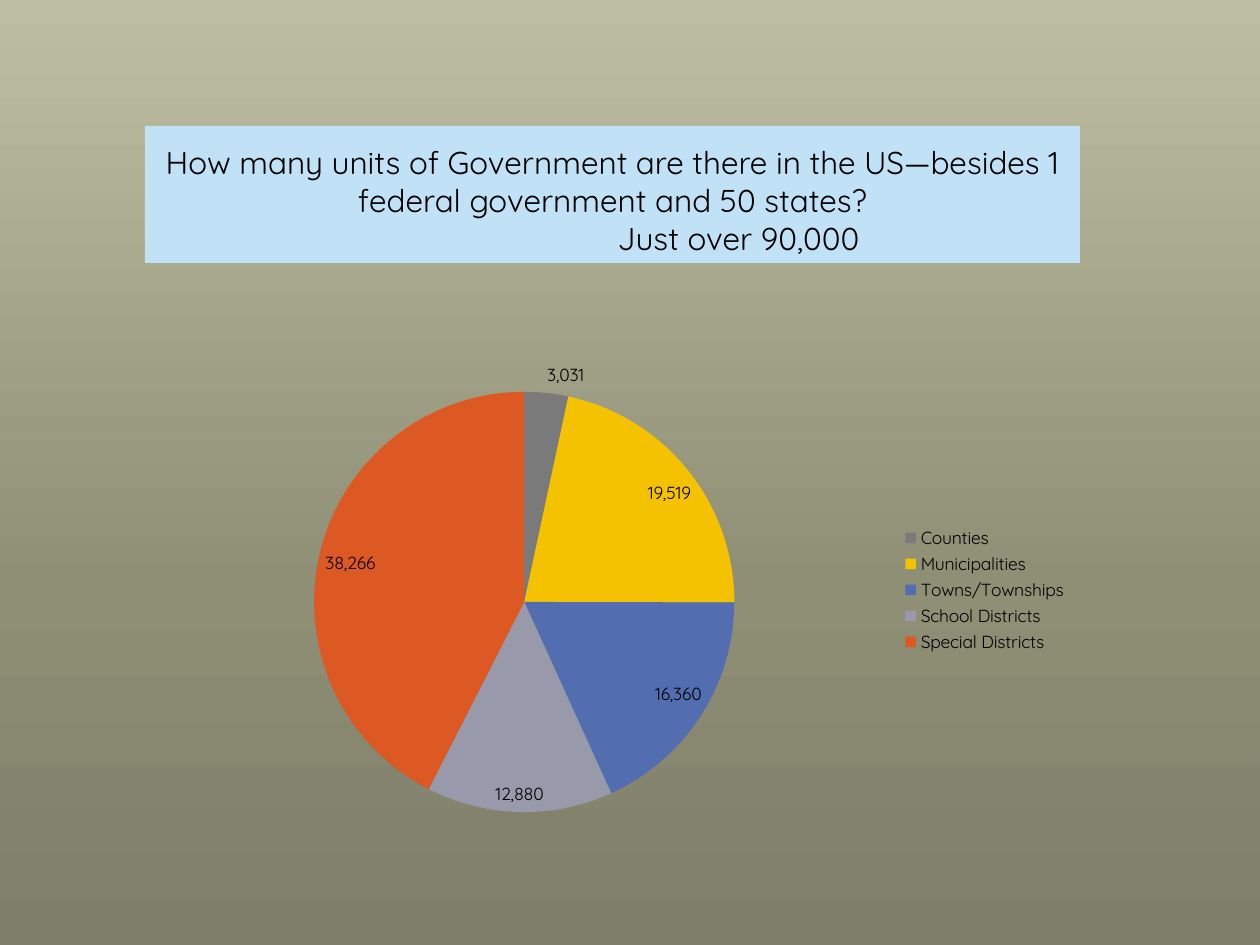
from copy import deepcopy

from lxml.etree import SubElement
from pptx import Presentation
from pptx.chart.data import CategoryChartData
from pptx.dml.color import RGBColor
from pptx.enum.chart import XL_CHART_TYPE, XL_LABEL_POSITION, XL_LEGEND_POSITION
from pptx.enum.shapes import MSO_SHAPE
from pptx.enum.text import MSO_ANCHOR, PP_ALIGN
from pptx.oxml.ns import qn
from pptx.util import Pt

PX = 914400 // 126  # one pixel in EMU
FONT = "Quicksand"
COLORS = {
    "text": "000000",
    "banner": "C1E1F6",
    "Counties": "7A7A7A",
    "Municipalities": "F5C201",
    "Towns/Townships": "526DB0",
    "School Districts": "989AAC",
    "Special Districts": "DC5924",
}
BACKGROUND = [(0, "BEBEA2"), (0.62, "8F8F76"), (1, "7E7E69")]
UNITS = {
    "Counties": 3031,
    "Municipalities": 19519,
    "Towns/Townships": 16360,
    "School Districts": 12880,
    "Special Districts": 38266,
}


def px(*lengths):
    return [length * PX for length in lengths]


def color(name):
    return RGBColor.from_string(COLORS[name])


def style_font(font, size):
    font.name = FONT
    font.size = Pt(size)
    font.color.rgb = color("text")


def paint_background(page):
    fill = page.background.fill
    fill.gradient()
    fill.gradient_angle = 270  # top to bottom
    # A new gradient has two stops; add the third
    stop_list = next(page.background._cSld.iter(qn("a:gsLst")))
    stop_list.append(deepcopy(stop_list[-1]))
    for stop, (position, value) in zip(fill.gradient_stops, BACKGROUND):
        stop.position = position
        stop.color.rgb = RGBColor.from_string(value)


def add_banner(page, left, top, width, height):
    box = page.shapes.add_shape(MSO_SHAPE.RECTANGLE, *px(left, top, width, height))
    box.shadow.inherit = False
    box.fill.solid()
    box.fill.fore_color.rgb = color("banner")
    box.line.fill.background()

    frame = box.text_frame
    frame.word_wrap = True
    frame.vertical_anchor = MSO_ANCHOR.BOTTOM
    question = frame.paragraphs[0]
    question.text = (
        "How many units of Government are there in the US—besides 1 "
        "federal government and 50 states?"
    )
    answer = frame.add_paragraph()
    answer.text = "Just over 90,000"
    # The indent moves the centred answer to the right
    answer._p.get_or_add_pPr().set("marL", str(252 * PX))
    for para in frame.paragraphs:
        para.alignment = PP_ALIGN.CENTER
        style_font(para.font, 18)


def set_plot_area(chart, **fractions):
    """Place the pie within the chart, as fractions of the chart's size."""
    plot_area = chart._chartSpace.chart.plotArea
    layout = plot_area.find(qn("c:layout"))
    if layout is None:
        layout = SubElement(plot_area, qn("c:layout"))
        plot_area.insert(0, layout)
    manual = SubElement(layout, qn("c:manualLayout"))
    settings = {"layoutTarget": "inner", "xMode": "edge", "yMode": "edge", **fractions}
    for tag, value in settings.items():
        SubElement(manual, qn(f"c:{tag}")).set("val", str(value))


def add_units_pie(page, left, top, width, height):
    data = CategoryChartData(number_format="#,##0")
    data.categories = list(UNITS)
    data.add_series("Series 1", list(UNITS.values()))
    chart = page.shapes.add_chart(
        XL_CHART_TYPE.PIE, *px(left, top, width, height), data
    ).chart
    chart.has_title = False
    style_font(chart.font, 10)
    set_plot_area(chart, x=0.18, y=0.09, w=0.45, h=0.87)

    # Legend
    chart.has_legend = True
    chart.legend.position = XL_LEGEND_POSITION.RIGHT
    chart.legend.include_in_layout = False

    # Slices
    plot = chart.plots[0]
    plot.vary_by_categories = True
    for index, name in enumerate(UNITS):
        fill = plot.series[0].points[index].format.fill
        fill.solid()
        fill.fore_color.rgb = color(name)

    # Value labels
    plot.has_data_labels = True
    labels = plot.data_labels
    labels.show_value = True
    labels.show_percentage = False
    labels.number_format = "#,##0"
    labels.number_format_is_linked = False
    labels.position = XL_LABEL_POSITION.BEST_FIT
    style_font(labels.font, 10)


def main():
    deck = Presentation()
    deck.slide_width, deck.slide_height = px(1260, 945)
    page = deck.slides.add_slide(deck.slide_layouts[6])
    paint_background(page)
    add_banner(page, 145, 126, 935, 137)
    add_units_pie(page, 146, 348, 934, 484)
    deck.save("out.pptx")


if __name__ == "__main__":
    main()
